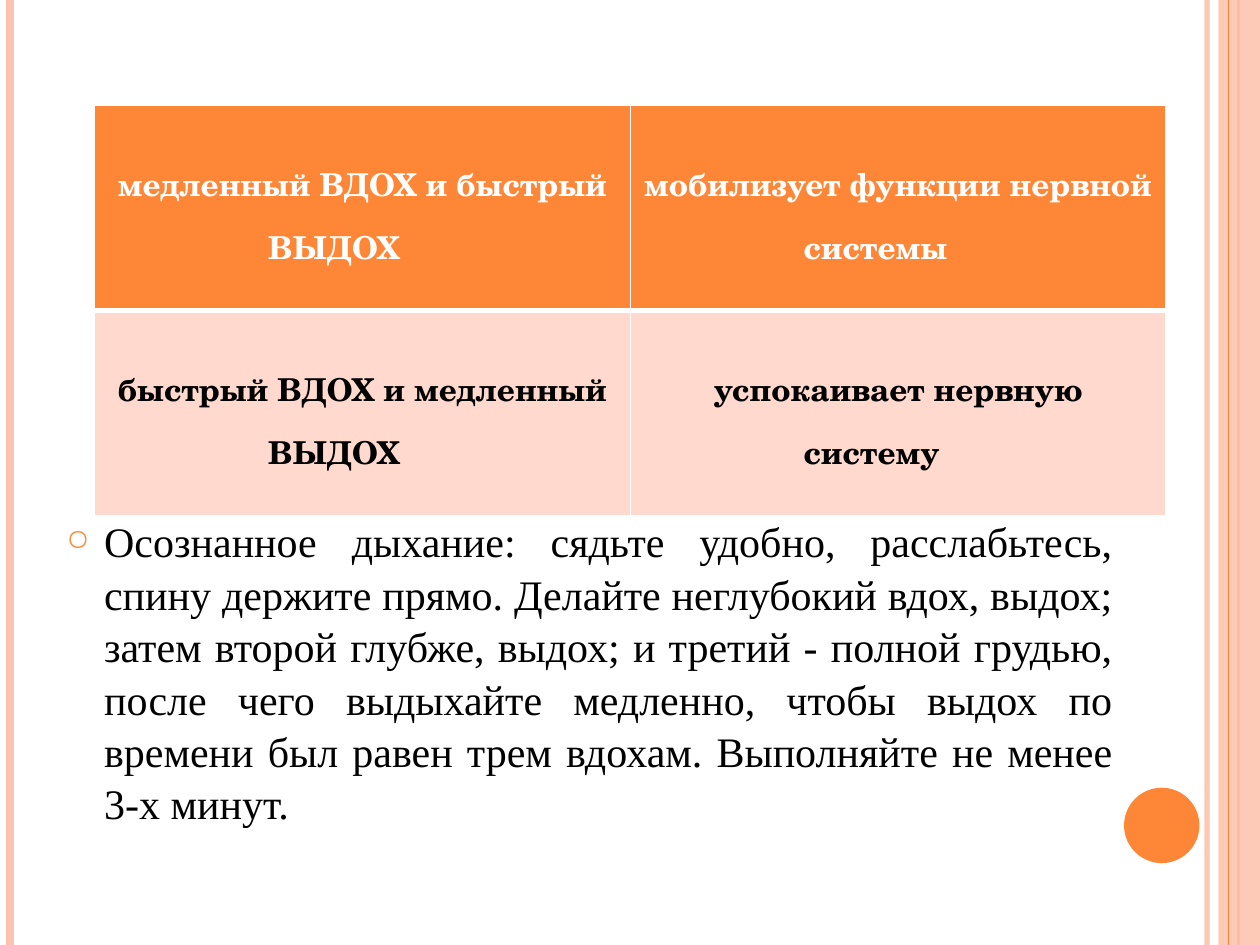
from pptx import Presentation
from pptx.dml.color import RGBColor
from pptx.enum.shapes import MSO_CONNECTOR, MSO_SHAPE
from pptx.enum.text import MSO_ANCHOR, PP_ALIGN
from pptx.oxml import parse_xml
from pptx.oxml.ns import nsdecls, qn
from pptx.util import Cm, Pt
from lxml.etree import SubElement

COLORS = {"orange": "FE8637", "peach": "FEC3AE", "pale": "FFD9CE",
          "white": "FFFFFF", "black": "000000"}
WIDTH, HEIGHT = 25.4, 19.05
STRIPES = [(24.33, "peach", 3, 93), (0.2, "peach", 4.5, 100), (24.97, "orange", 1.5, 100)]
THIN_STRIPE = (24.77, "orange", 0.75, 100)
BREATHING = [
    ("медленный ВДОХ и быстрый ВЫДОХ \t", "мобилизует функции нервной системы \t"),
    ("быстрый ВДОХ и медленный ВЫДОХ \t", "успокаивает нервную систему \t"),
]
ROW_STYLES = [("orange", "white", 3), ("pale", "black", 1)]
EXERCISE = (
    "Осознанное дыхание: сядьте удобно, расслабьтесь, спину держите прямо. "
    "Делайте неглубокий вдох, выдох; затем второй глубже, выдох; и третий - полной грудью, "
    "после чего выдыхайте медленно, чтобы выдох по времени был равен трем вдохам. "
    "Выполняйте не менее 3-х минут."
)


def color(name):
    """Return the palette colour of that name."""
    return RGBColor.from_string(COLORS[name])


def set_opacity(element, percent):
    """Make the solid colour inside an element partly transparent."""
    if percent < 100:
        solid = next(element.iter(qn("a:srgbClr")))
        SubElement(solid, qn("a:alpha"), val=str(percent * 1000))


def add_stripe(slide, x, name, width, opacity):
    """Draw a vertical line over the full height of the slide."""
    stripe = slide.shapes.add_connector(MSO_CONNECTOR.STRAIGHT, Cm(x), Cm(0), Cm(x), Cm(HEIGHT))
    stripe.line.color.rgb = color(name)
    stripe.line.width = Pt(width)
    properties = stripe._element.spPr
    set_opacity(properties, opacity)
    SubElement(properties, qn("a:effectLst"))


def add_filled_shape(slide, kind, left, top, width, height, name, opacity=100):
    """Draw a preset shape with a fill and no outline."""
    shape = slide.shapes.add_shape(kind, Cm(left), Cm(top), Cm(width), Cm(height))
    shape.shadow.inherit = False
    shape.fill.solid()
    shape.fill.fore_color.rgb = color(name)
    shape.line.fill.background()
    set_opacity(shape._element.spPr, opacity)


def add_exercise(slide, left, top, width, height):
    """Write the justified exercise text with its round bullet."""
    frame = slide.shapes.add_textbox(Cm(left), Cm(top), Cm(width), Cm(height)).text_frame
    frame.word_wrap = True
    frame.margin_top = 0
    paragraph = frame.paragraphs[0]
    paragraph.text = EXERCISE
    paragraph.alignment = PP_ALIGN.JUSTIFY
    paragraph.line_spacing = 1.04
    properties = paragraph._p.get_or_add_pPr()
    properties.set("marL", str(Cm(0.76)))
    properties.set("indent", str(-Cm(0.76)))
    bullet_color = SubElement(properties, qn("a:buClr"))
    SubElement(bullet_color, qn("a:srgbClr"), val=COLORS["orange"])
    SubElement(properties, qn("a:buSzPct"), val="70000")
    SubElement(properties, qn("a:buChar"), char="○")
    paragraph.font.name = "Times New Roman"
    paragraph.font.size = Pt(24)
    paragraph.font.color.rgb = color("black")


def set_borders(cell, top, bottom):
    """Give a cell white borders; the side ones are one point wide."""
    properties = cell._tc.get_or_add_tcPr()
    widths = {"lnL": 1, "lnR": 1, "lnT": top, "lnB": bottom}
    for index, (tag, width) in enumerate(widths.items()):
        properties.insert(index, parse_xml(
            f'<a:{tag} {nsdecls("a")} w="{Pt(width)}"><a:solidFill>'
            f'<a:srgbClr val="{COLORS["white"]}"/></a:solidFill></a:{tag}>'))


def fill_cell(cell, text, fill, ink):
    """Write bold centred text into a coloured cell."""
    cell.fill.solid()
    cell.fill.fore_color.rgb = color(fill)
    cell.vertical_anchor = MSO_ANCHOR.MIDDLE
    paragraph = cell.text_frame.paragraphs[0]
    paragraph.text = text
    paragraph.alignment = PP_ALIGN.CENTER
    paragraph.line_spacing = 1.3
    paragraph.font.name = "TeX Gyre Schola"
    paragraph.font.size = Pt(18)
    paragraph.font.bold = True
    paragraph.font.color.rgb = color(ink)


def add_breathing_table(slide, left, top, width, height):
    """Add the table of breathing patterns and their effects."""
    table = slide.shapes.add_table(
        len(BREATHING), 2, Cm(left), Cm(top), Cm(width), Cm(height)).table
    top_border = 1
    for row, (texts, (fill, ink, bottom_border)) in enumerate(zip(BREATHING, ROW_STYLES)):
        for column, text in enumerate(texts):
            cell = table.cell(row, column)
            fill_cell(cell, text, fill, ink)
            set_borders(cell, top_border, bottom_border)
        top_border = bottom_border


def main():
    """Build the breathing slide and save it."""
    presentation = Presentation()
    presentation.slide_width, presentation.slide_height = Cm(WIDTH), Cm(HEIGHT)
    slide = presentation.slides.add_slide(presentation.slide_layouts[6])
    for stripe in STRIPES:
        add_stripe(slide, *stripe)
    add_filled_shape(slide, MSO_SHAPE.RECTANGLE, 24.56, 0, 0.84, HEIGHT, "peach", 87)
    add_stripe(slide, *THIN_STRIPE)
    add_filled_shape(slide, MSO_SHAPE.OVAL, 22.66, 15.88, 1.52, 1.52, "orange")
    add_exercise(slide, 1.09, 10.36, 21.59, 6.79)
    add_breathing_table(slide, 1.91, 2.13, 21.59, 8.26)
    presentation.save("out.pptx")


if __name__ == "__main__":
    main()
